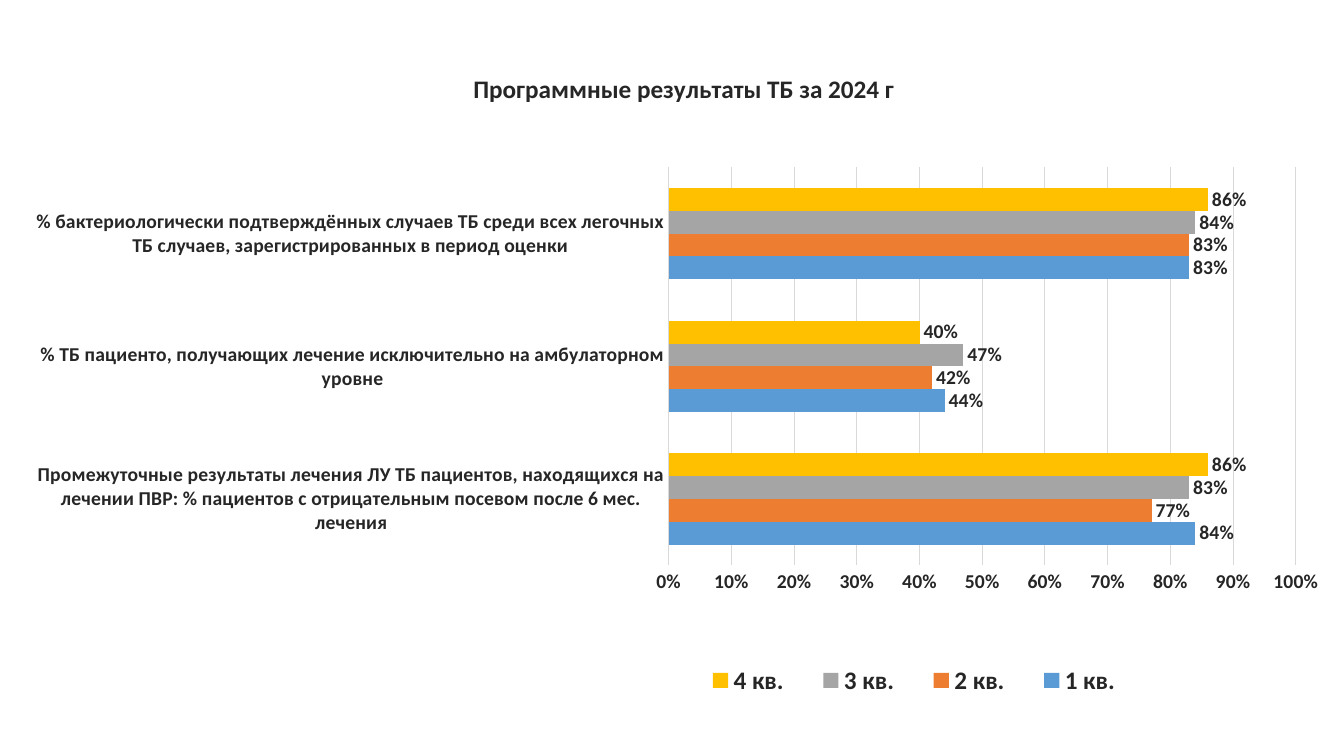
"""Build a slide with a clustered bar chart of quarterly TB programme results."""
import lxml.etree
import pptx
import pptx.chart.data
import pptx.dml.color
import pptx.enum.chart
import pptx.oxml.ns
import pptx.util

COLORS = {"text": "262626", "line": "D9D9D9"}
CATEGORIES = [
    "Промежуточные результаты лечения ЛУ ТБ пациентов, находящихся на лечении ПВР: "
    "% пациентов с отрицательным посевом после 6 мес. лечения",
    "% ТБ пациенто, получающих лечение исключительно на амбулаторном уровне",
    "% бактериологически подтверждённых случаев ТБ среди всех легочных ТБ случаев, "
    "зарегистрированных в период оценки",
]
QUARTERS = {
    "1 кв.": ("5B9BD5", [0.84, 0.44, 0.83]),
    "2 кв.": ("ED7D31", [0.77, 0.42, 0.83]),
    "3 кв.": ("A5A5A5", [0.83, 0.47, 0.84]),
    "4 кв.": ("FFC000", [0.86, 0.40, 0.86]),
}


def set_font(font, size):
    font.name = "Calibri"
    font.size = pptx.util.Pt(size)
    font.bold = True
    font.color.rgb = pptx.dml.color.RGBColor.from_string(COLORS["text"])


def set_layout(element, index, **settings):
    tag = pptx.oxml.ns.qn
    for old in element.findall(tag("c:layout")):
        element.remove(old)
    layout = element.makeelement(tag("c:layout"), {})
    element.insert(index, layout)
    manual = lxml.etree.SubElement(layout, tag("c:manualLayout"))
    for name, value in settings.items():
        lxml.etree.SubElement(manual, tag("c:" + name)).set("val", str(value))


deck = pptx.Presentation()
deck.slide_width = pptx.util.Inches(13.33)
deck.slide_height = pptx.util.Inches(7.5)
page = deck.slides.add_slide(deck.slide_layouts[6])

data = pptx.chart.data.CategoryChartData(number_format="0%")
data.categories = CATEGORIES
for quarter, (color, values) in QUARTERS.items():
    data.add_series(quarter, values)

chart = page.shapes.add_chart(
    pptx.enum.chart.XL_CHART_TYPE.BAR_CLUSTERED,
    pptx.util.Inches(0.36), pptx.util.Inches(0.38),
    pptx.util.Inches(12.8), pptx.util.Inches(7), data,
).chart
set_font(chart.font, 14)

chart.has_title = True
title = chart.chart_title
title.include_in_layout = False
title.text_frame.text = "Программные результаты ТБ за 2024 г"
set_font(title.text_frame.paragraphs[0].font, 18)

chart.has_legend = True
legend = chart.legend
legend.position = pptx.enum.chart.XL_LEGEND_POSITION.BOTTOM
legend.include_in_layout = False
set_font(legend.font, 18)

plot = chart.plots[0]
plot.gap_width = 182
plot.overlap = 0
plot.vary_by_categories = False
for series, (color, values) in zip(plot.series, QUARTERS.values()):
    series.format.fill.solid()
    series.format.fill.fore_color.rgb = pptx.dml.color.RGBColor.from_string(color)
    labels = series.data_labels
    labels.show_value = True
    labels.number_format = "0%"
    labels.number_format_is_linked = False
    labels.position = pptx.enum.chart.XL_LABEL_POSITION.OUTSIDE_END
    set_font(labels.font, 14)

category_axis, value_axis = chart.category_axis, chart.value_axis
for axis in (category_axis, value_axis):
    axis.major_tick_mark = pptx.enum.chart.XL_TICK_MARK.NONE
    axis.minor_tick_mark = pptx.enum.chart.XL_TICK_MARK.NONE
    set_font(axis.tick_labels.font, 14)
value_axis.minimum_scale, value_axis.maximum_scale = 0, 1
value_axis.major_unit = 0.1
value_axis.tick_labels.number_format = "0%"
value_axis.tick_labels.number_format_is_linked = False
value_axis.has_major_gridlines = True
value_axis.format.line.fill.background()
for line in (category_axis.format.line, value_axis.major_gridlines.format.line):
    line.color.rgb = pptx.dml.color.RGBColor.from_string(COLORS["line"])
    line.width = pptx.util.Pt(0.75)

plot_area = chart._chartSpace.chart.plotArea
set_layout(plot_area, 0, layoutTarget="inner", xMode="edge", yMode="edge",
           x=0.49, y=0.183, w=0.486, h=0.564)
set_layout(legend._element, 1, xMode="edge", yMode="edge", x=0.5, y=0.87, w=0.36, h=0.08)
set_layout(title._element, 1, xMode="edge", yMode="edge", x=0.335, y=0.04)

deck.save("out.pptx")
